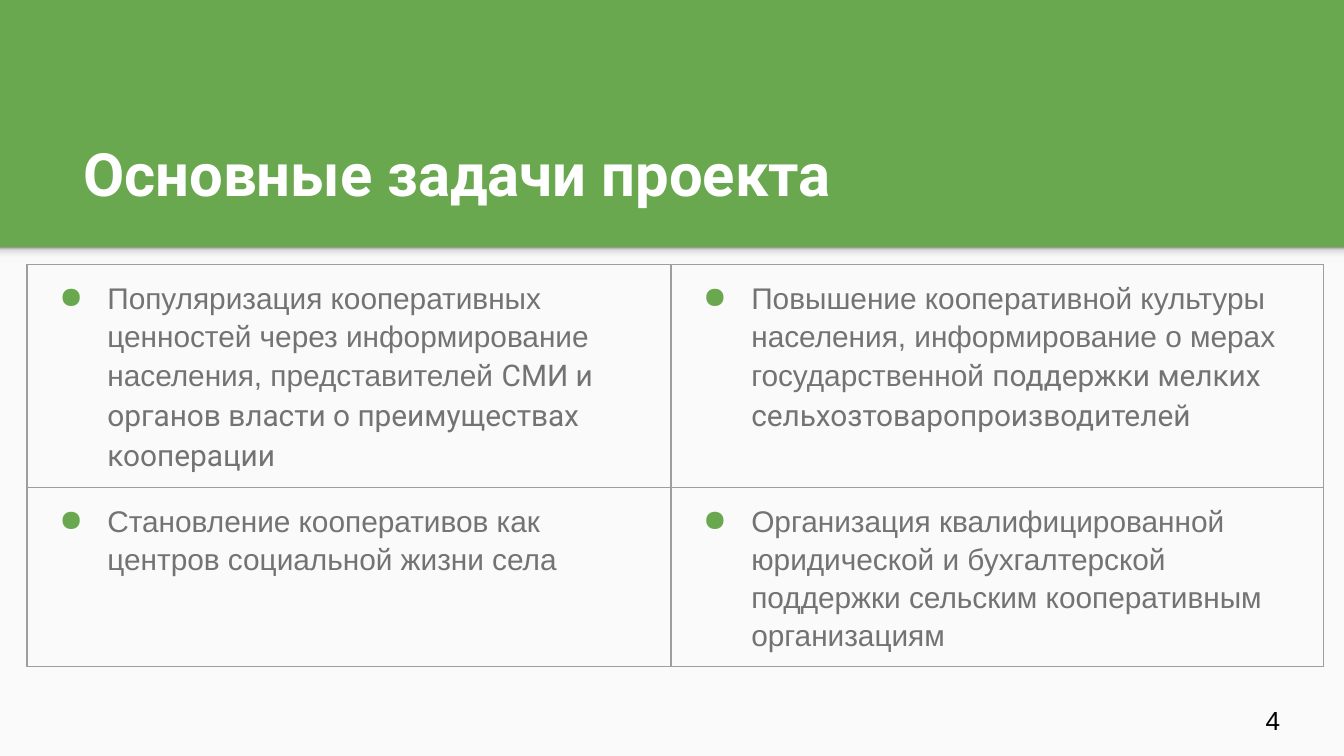
from lxml import etree
from pptx import Presentation
from pptx.dml.color import RGBColor
from pptx.enum.shapes import MSO_SHAPE
from pptx.enum.text import MSO_ANCHOR, MSO_AUTO_SIZE, PP_ALIGN
from pptx.oxml.ns import qn
from pptx.util import Cm, Pt

RECT = MSO_SHAPE.RECTANGLE
BOTTOM, MIDDLE, TOP = MSO_ANCHOR.BOTTOM, MSO_ANCHOR.MIDDLE, MSO_ANCHOR.TOP
LEFT = PP_ALIGN.LEFT
FIXED = MSO_AUTO_SIZE.NONE

TITLE = "Основные задачи проекта"
NUMBER = "4"
TASKS = [
    [
        [("Популяризация кооперативных ценностей через информирование "
          "населения, представителей ", "Arial"),
         ("СМИ и органов власти о преимуществах кооперации", "Roboto")],
        [("Повышение кооперативной культуры населения, информирование "
          "о мерах государственной ", "Arial"),
         ("поддержки мелких сельхозтоваропроизводителей", "Roboto")],
    ],
    [
        [("Становление кооперативов как центров социальной жизни села", "Arial")],
        [("Организация квалифицированной юридической и бухгалтерской "
          "поддержки сельским кооперативным организациям", "Arial")],
    ],
]
COLS = [12.17, 12.34]
ROWS = [4.21, 3.38]
THEME = {
    "green": "6AA84F", "paper": "FAFAFA", "white": "FFFFFF",
    "text": "737373", "black": "000000", "rule": "9E9E9E",
    "shade": [(0, "F9F9F9"), (36, "F9F9F9"), (80, "DEDEDE"), (100, "999999")],
    "title": 32, "body": 16, "number": 14,
}
WIDE, HIGH, EDGE, PAD = 25.4, 14.29, 4.67, Cm(0.25)


def tint(name):
    return RGBColor.from_string(THEME[name])


def node(up, tag, **attrs):
    return etree.SubElement(up, qn(tag), {k: str(v) for k, v in attrs.items()})


def style(run, face, size, color, bold=False):
    font = run.font
    font.name, font.size, font.bold = face, Pt(THEME[size]), bold
    font.color.rgb = tint(color)


def label(shape, text, anchor, *look):
    frame = shape.text_frame
    frame.text = text
    frame.word_wrap, frame.auto_size = True, FIXED
    frame.vertical_anchor = anchor
    frame.margin_left = frame.margin_right = PAD
    frame.margin_top = frame.margin_bottom = PAD
    par = frame.paragraphs[0]
    par.alignment = LEFT
    style(par.runs[0], *look)


def band(slide, high):
    shape = slide.shapes.add_shape(RECT, 0, Cm(EDGE), Cm(WIDE), Cm(high))
    shape.shadow.inherit = False
    shape.line.fill.background()
    return shape


def shade(shape):
    shape.fill.gradient()
    shape.fill.gradient_angle = 90
    stops = shape._element.spPr.find(qn("a:gradFill")).find(qn("a:gsLst"))
    for old in list(stops):
        stops.remove(old)
    for spot, color in THEME["shade"]:
        node(node(stops, "a:gs", pos=spot * 1000), "a:srgbClr", val=color)


def border(cell):
    props = cell._tc.get_or_add_tcPr()
    for i, side in enumerate("LRTB"):
        line = node(props, "a:ln" + side, w=Pt(0.75))
        node(node(line, "a:solidFill"), "a:srgbClr", val=THEME["rule"])
        props.insert(i, line)


def bullet(par):
    props = par._p.get_or_add_pPr()
    props.set("marL", str(Cm(1.27)))
    props.set("indent", str(-Cm(0.91)))
    node(node(props, "a:buClr"), "a:srgbClr", val=THEME["green"])
    node(props, "a:buChar", char="●")


def fill(cell, parts):
    cell.fill.background()
    border(cell)
    cell.vertical_anchor = TOP
    cell.margin_left = cell.margin_right = PAD
    cell.margin_top = cell.margin_bottom = PAD
    par = cell.text_frame.paragraphs[0]
    par.line_spacing, par.space_after = 1.15, Pt(16)
    bullet(par)
    for text, face in parts:
        run = par.add_run()
        run.text = text
        style(run, face, "body", "text")


def grid(slide):
    frame = slide.shapes.add_table(
        len(ROWS), len(COLS), Cm(0.51), Cm(5), Cm(sum(COLS)), Cm(sum(ROWS)))
    table = frame.table
    table.first_row = table.horz_banding = False
    for col, wide in zip(table.columns, COLS):
        col.width = Cm(wide)
    for row, high, tasks in zip(table.rows, ROWS, TASKS):
        row.height = Cm(high)
        for cell, parts in zip(row.cells, tasks):
            fill(cell, parts)


def main():
    deck = Presentation()
    deck.slide_width, deck.slide_height = Cm(WIDE), Cm(HIGH)
    slide = deck.slides.add_slide(deck.slide_layouts[5])
    back = slide.background.fill
    back.solid()
    back.fore_color.rgb = tint("green")

    paper = band(slide, HIGH - EDGE)
    paper.fill.solid()
    paper.fill.fore_color.rgb = tint("paper")
    shade(band(slide, 0.3))

    title = slide.shapes.title
    title.left, title.top = Cm(1.32), Cm(2.06)
    title.width, title.height = Cm(22.83), Cm(2.13)
    label(title, TITLE, BOTTOM, "Roboto", "title", "white", True)

    grid(slide)
    box = slide.shapes.add_textbox(Cm(23.67), Cm(13.06), Cm(1.52), Cm(1.09))
    label(box, NUMBER, MIDDLE, "Arial", "number", "black")
    deck.save("out.pptx")


if __name__ == "__main__":
    main()
